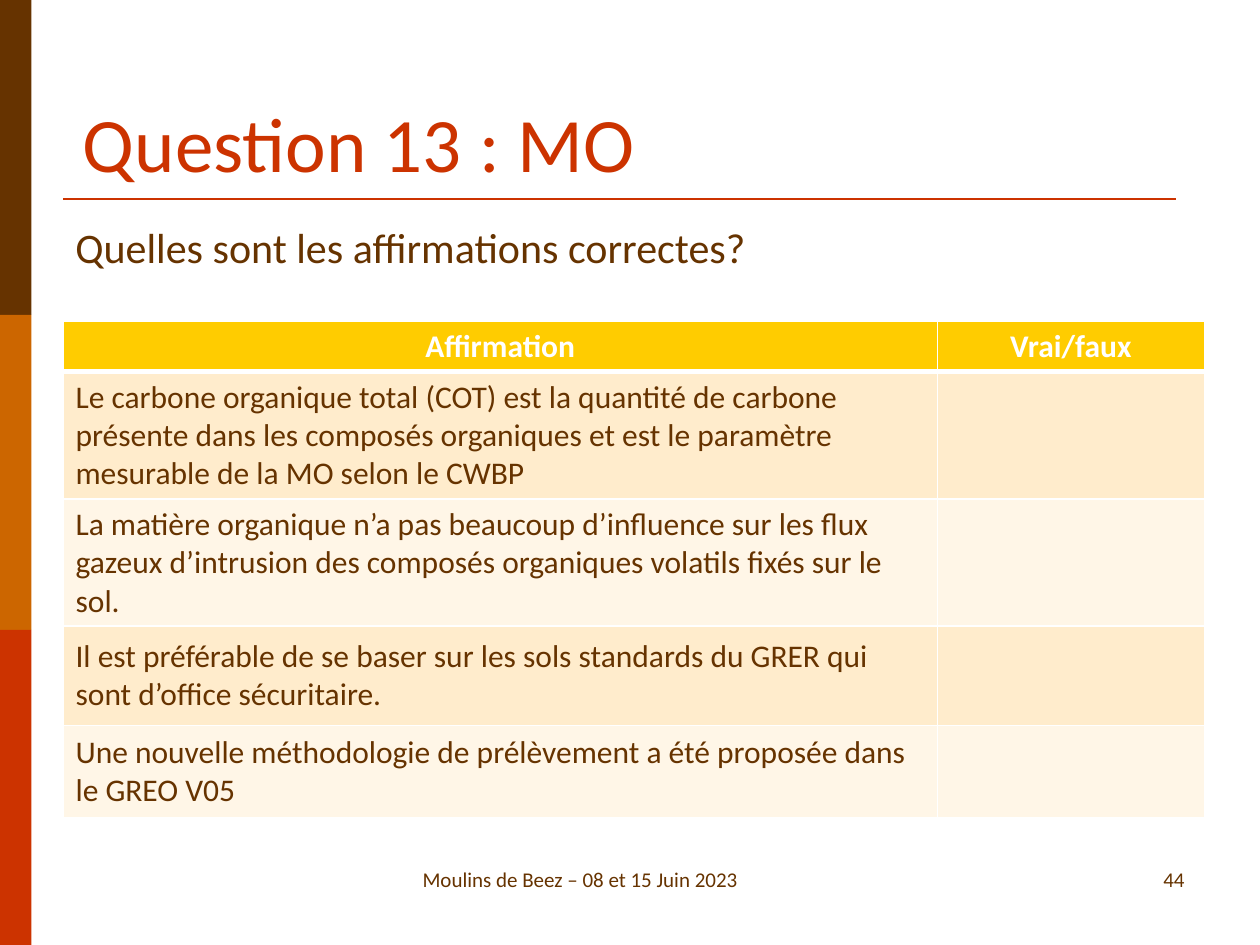
from dataclasses import dataclass

from lxml.etree import SubElement
from pptx import Presentation
from pptx.dml.color import RGBColor
from pptx.enum.shapes import MSO_CONNECTOR, MSO_SHAPE
from pptx.enum.text import MSO_ANCHOR, PP_ALIGN
from pptx.oxml.ns import qn
from pptx.util import Inches, Pt


@dataclass(frozen=True)
class Theme:
    font: str = "Calibri"
    brown: str = "663300"
    orange: str = "CC6600"
    red: str = "CC3300"
    white: str = "FFFFFF"
    header: str = "FFCC00"
    bands: tuple = ("FFECCC", "FFF6E7")
    title_size: int = 44
    question_size: int = 24
    table_size: int = 18
    footer_size: int = 12


THEME = Theme()


@dataclass(frozen=True)
class TextStyle:
    size: int
    color: str = THEME.brown
    bold: bool = False
    align: PP_ALIGN = PP_ALIGN.LEFT


@dataclass(frozen=True)
class Label:
    text: str
    at: tuple
    style: TextStyle
    anchor: MSO_ANCHOR = MSO_ANCHOR.TOP


LABELS = (
    Label("Question 13 : MO", (0.56, 0.29, 9, 1.25),
          TextStyle(THEME.title_size, THEME.red), MSO_ANCHOR.BOTTOM),
    Label("Quelles sont les affirmations correctes?", (0.5, 1.71, 9.13, 0.7),
          TextStyle(THEME.question_size)),
    Label("44", (8.47, 6.83, 1.03, 0.5),
          TextStyle(THEME.footer_size, align=PP_ALIGN.RIGHT)),
    Label("Moulins de Beez – 08 et 15 Juin 2023", (1.06, 6.83, 7.09, 0.5),
          TextStyle(THEME.footer_size, align=PP_ALIGN.CENTER)),
)

HEADINGS = ("Affirmation", "Vrai/faux")
STATEMENTS = (
    "Le carbone organique total (COT) est la quantité de carbone présente dans "
    "les composés organiques et est le paramètre mesurable de la MO selon le CWBP",
    "La matière organique n’a pas beaucoup d’influence sur les flux gazeux "
    "d’intrusion des composés organiques volatils fixés sur le sol.",
    "Il est préférable de se baser sur les sols standards du GRER qui sont "
    "d’office sécuritaire.",
    "Une nouvelle méthodologie de prélèvement a été proposée dans le GREO V05",
)
COLUMN_WIDTHS = (6.94, 2.12)
ROW_HEIGHTS = (0.4, 1.01, 1.01, 0.79, 0.73)


def rgb(color: str) -> RGBColor:
    return RGBColor.from_string(color)


def write(frame, text: str, style: TextStyle) -> None:
    para = frame.paragraphs[0]
    para.alignment = style.align
    span = para.add_run()
    span.text = text
    formats = {"name": THEME.font, "size": Pt(style.size), "bold": style.bold}
    for name, value in formats.items():
        setattr(span.font, name, value)
    span.font.color.rgb = rgb(style.color)


def add_label(slide, label: Label) -> None:
    box = slide.shapes.add_textbox(*map(Inches, label.at))
    frame = box.text_frame
    frame.word_wrap = True
    frame.vertical_anchor = label.anchor
    write(frame, label.text, label.style)


def add_side_bars(slide) -> None:
    for index, color in enumerate((THEME.brown, THEME.orange, THEME.red)):
        bar = slide.shapes.add_shape(MSO_SHAPE.RECTANGLE, 0, Inches(2.5 * index),
                                     Inches(0.25), Inches(2.5))
        bar.shadow.inherit = False
        bar.fill.solid()
        bar.fill.fore_color.rgb = rgb(color)
        bar.line.fill.background()


def add_title_rule(slide) -> None:
    rule = slide.shapes.add_connector(MSO_CONNECTOR.STRAIGHT, Inches(0.5),
                                      Inches(1.58), Inches(9.33), Inches(1.58))
    rule.line.color.rgb = rgb(THEME.red)
    rule.line.width = Pt(1.5)
    SubElement(rule._element.spPr, qn("a:effectLst"))


def set_borders(cell, widths: dict) -> None:
    properties = cell._tc.get_or_add_tcPr()
    for position, (side, width) in enumerate(widths.items()):
        line = SubElement(properties, qn(f"a:{side}"), w=str(Pt(width)))
        fill = SubElement(line, qn("a:solidFill"))
        SubElement(fill, qn("a:srgbClr"), val=THEME.white)
        properties.insert(position, line)


def add_statement_table(slide) -> None:
    rows = [HEADINGS] + [(statement, "") for statement in STATEMENTS]
    table = slide.shapes.add_table(
        len(rows), len(HEADINGS), Inches(0.5), Inches(2.55),
        Inches(sum(COLUMN_WIDTHS)), Inches(sum(ROW_HEIGHTS))).table
    for column, width in zip(table.columns, COLUMN_WIDTHS):
        column.width = Inches(width)
    heading = TextStyle(THEME.table_size, THEME.white, True, PP_ALIGN.CENTER)
    statement = TextStyle(THEME.table_size)

    for index, texts in enumerate(rows):
        table.rows[index].height = Inches(ROW_HEIGHTS[index])
        color = THEME.bands[(index - 1) % 2] if index else THEME.header
        borders = {"lnL": 1, "lnR": 1, "lnT": 3 if index == 1 else 1,
                   "lnB": 1 if index else 3}
        for cell, text in zip(table.rows[index].cells, texts):
            cell.vertical_anchor = MSO_ANCHOR.MIDDLE
            cell.fill.solid()
            cell.fill.fore_color.rgb = rgb(color)
            set_borders(cell, borders)
            if text:
                write(cell.text_frame, text, statement if index else heading)


def main() -> None:
    deck = Presentation()
    deck.slide_width, deck.slide_height = Inches(10), Inches(7.5)
    slide = deck.slides.add_slide(deck.slide_layouts[6])

    # Decoration
    add_side_bars(slide)
    add_title_rule(slide)

    # Title, question and footer
    for label in LABELS:
        add_label(slide, label)

    # Statements to judge
    add_statement_table(slide)

    deck.save("out.pptx")


if __name__ == "__main__":
    main()
